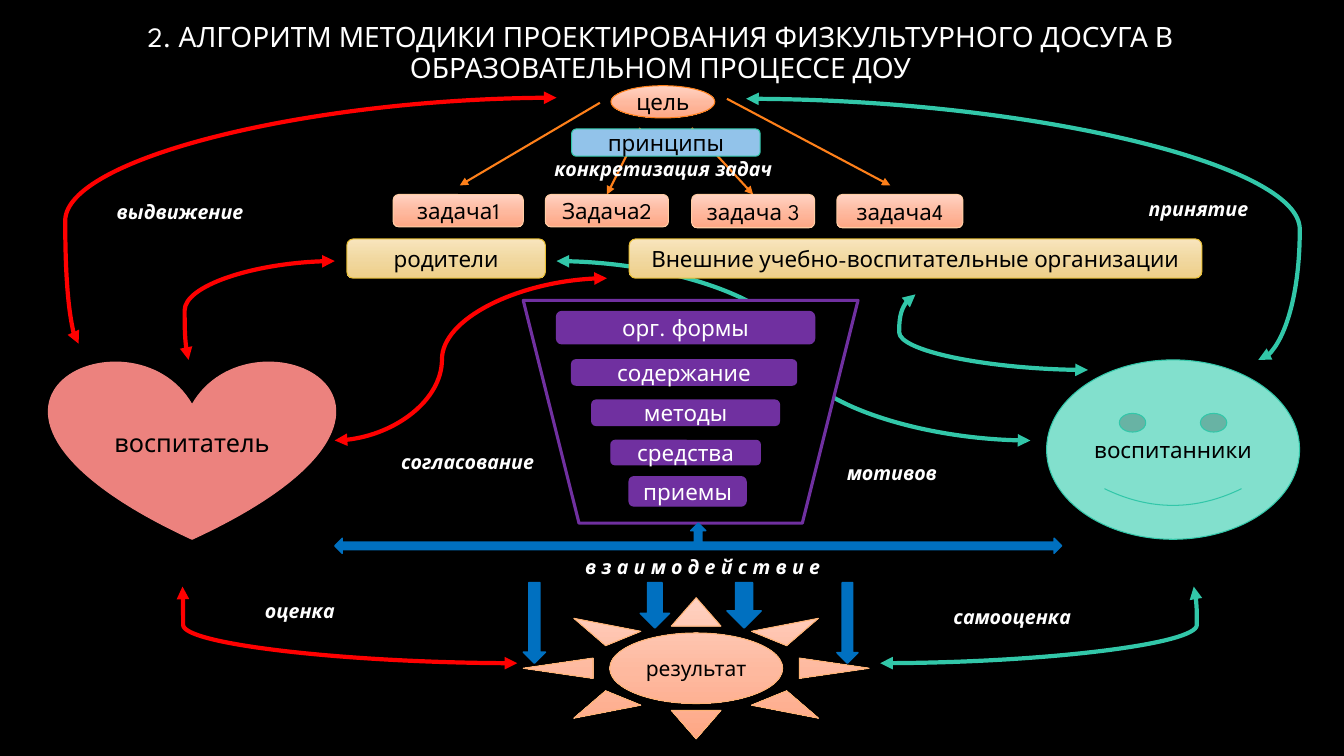
from copy import deepcopy
from dataclasses import dataclass

from pptx import Presentation
from pptx.dml.color import RGBColor as RGB
from pptx.enum.shapes import MSO_CONNECTOR as LINK, MSO_SHAPE as SHAPE
from pptx.enum.text import MSO_ANCHOR as ANCHOR, MSO_AUTO_SIZE as FIT, PP_ALIGN as ALIGN
from pptx.oxml.ns import qn
from pptx.oxml.xmlchemy import OxmlElement
from pptx.util import Inches, Pt


@dataclass(frozen=True)
class Theme:
    font: str = "League Spartan"
    black: str = "000000"
    white: str = "FFFFFF"
    red: str = "FF0000"
    teal: str = "32C7A9"
    mint: str = "82E0CD"
    sky: str = "92C3EA"
    rose: str = "EC827E"
    orange: str = "FE801A"
    apricot: str = "FEB376"
    cream: str = "FFCCA3"
    gold: str = "E9BF35"
    purple: str = "7030A0"
    blue: str = "0070C0"
    peach: tuple = ("FFD2C2", "FEB99F", "FEA785")
    sand: tuple = ("F8E5BD", "F1D8A0", "EECF89")
    title: int = 20
    large: int = 18
    body: int = 16
    small: int = 15
    label: int = 14


T = Theme()
STOPS = (0, 0.52, 1)

TITLE = ("2. АЛГОРИТМ МЕТОДИКИ ПРОЕКТИРОВАНИЯ ФИЗКУЛЬТУРНОГО ДОСУГА "
         "В ОБРАЗОВАТЕЛЬНОМ ПРОЦЕССЕ ДОУ")

# text, shape, (left, top, width, height), fill, line, type size
FIGURES = [
    ("цель", SHAPE.OVAL, (6.06, 0.85, 1.03, 0.32), T.peach, T.orange, T.body),
    ("результат", SHAPE.SUN, (5.19, 5.93, 3.43, 1.4), T.peach, T.apricot, T.small),
    ("воспитанники", SHAPE.SMILEY_FACE, (10.38, 3.57, 2.51, 1.78), T.mint, T.teal, T.body),
    ("воспитатель", SHAPE.HEART, (0.49, 3.57, 2.83, 1.78), T.rose, T.rose, T.large),
    ("принципы", SHAPE.ROUNDED_RECTANGLE, (5.67, 1.28, 1.87, 0.27), T.sky, T.teal, T.body),
]
# text, left, width, height
TASKS = [
    ("задача1", 3.9, 1.29, 0.32),
    ("Задача2", 5.41, 1.22, 0.32),
    ("задача 3", 6.86, 1.22, 0.33),
    ("задача4", 8.3, 1.25, 0.33),
]
# text, left, width
PARTNERS = [
    ("родители", 3.44, 1.97),
    ("Внешние учебно-воспитательные организации", 6.24, 5.68),
]
FUNNEL = (5.19, 2.98, 3.32, 2.21)
LAYERS = [
    ("орг. формы", (5.52, 3.09, 2.56, 0.32)),
    ("содержание", (5.67, 3.57, 2.23, 0.25)),
    ("методы", (5.87, 3.97, 1.86, 0.25)),
    ("средства", (6.06, 4.37, 1.48, 0.24)),
    ("приемы", (6.24, 4.73, 1.16, 0.29)),
]
BRIDGE = (3.32, 5.19, 7.21, 0.3)
# left, width, height
DROPS = [(8.3, 0.21, 0.8), (5.19, 0.22, 0.8), (7.21, 0.34, 0.45), (6.35, 0.29, 0.45)]

# text, box, alignment, anchor, wrap
LABELS = [
    ("конкретизация задач", (5.4, 1.5, 2.36, 0.34), ALIGN.CENTER, ANCHOR.MIDDLE, False),
    ("согласование", (3.88, 4.41, 1.79, 0.34), ALIGN.LEFT, ANCHOR.TOP, True),
    ("мотивов", (8.3, 4.52, 1.21, 0.34), ALIGN.LEFT, ANCHOR.TOP, True),
    ("выдвижение", (1.06, 1.93, 1.46, 0.34), ALIGN.LEFT, ANCHOR.MIDDLE, False),
    ("принятие", (10.99, 1.9, 1.49, 0.34), ALIGN.RIGHT, ANCHOR.MIDDLE, True),
    ("оценка", (2.53, 5.89, 0.94, 0.34), ALIGN.LEFT, ANCHOR.MIDDLE, False),
    ("самооценка", (9.22, 5.95, 1.5, 0.34), ALIGN.RIGHT, ANCHOR.MIDDLE, True),
    ("в з а и м о д е й с т в и е", (5.67, 5.45, 2.6, 0.34), ALIGN.CENTER, ANCHOR.MIDDLE, True),
]

# x1, y1, x2, y2, colour, bend in thousandths of the width
BACK_CURVES = [
    (5.52, 2.59, 10.22, 4.37, T.teal, 500),
    (7.4, 0.98, 12.48, 3.57, T.teal, 1081),
]
CURVES = [
    (0.78, 3.41, 5.52, 0.97, T.red, -28),
    (1.81, 5.82, 5.13, 6.58, T.red, 2),
    (8.73, 6.58, 11.84, 5.82, T.teal, 1010),
    (1.87, 3.57, 3.32, 2.59, T.red, -27),
    (9.08, 2.92, 10.79, 3.67, T.teal, -95),
    (3.32, 4.37, 6.02, 2.76, T.red, 394),
]
BACK_ARROWS = [(6.86, 1.27, 7.47, 1.93), (6.35, 1.27, 6.02, 1.93)]
ARROWS = [(5.95, 1.02, 4.56, 1.84), (7.21, 0.98, 8.83, 1.84)]


def write(shape, text, size, color, align=ALIGN.CENTER, anchor=ANCHOR.MIDDLE, wrap=True):
    frame = shape.text_frame
    frame.word_wrap = wrap
    frame.vertical_anchor = anchor
    para = frame.paragraphs[0]
    para.text = text
    para.alignment = align
    para.font.name = T.font
    para.font.size = Pt(size)
    para.font.color.rgb = RGB.from_string(color)
    return para


def paint(shape, fill):
    """Fill with one colour, or with a top-down gradient given a tuple."""
    if isinstance(fill, str):
        shape.fill.solid()
        shape.fill.fore_color.rgb = RGB.from_string(fill)
        return
    shape.fill.gradient()
    shape.fill.gradient_angle = 270
    stops = shape._element.spPr.find(".//" + qn("a:gsLst"))
    stops.append(deepcopy(stops[0]))
    for stop, pos, color in zip(shape.fill.gradient_stops, STOPS, fill):
        stop.position = pos
        stop.color.rgb = RGB.from_string(color)


def draw(slide, kind, box, fill, line, width=0.75):
    shape = slide.shapes.add_shape(kind, *map(Inches, box))
    shape.shadow.inherit = False
    paint(shape, fill)
    shape.line.color.rgb = RGB.from_string(line)
    shape.line.width = Pt(width)
    return shape


def join(slide, ends, color, width, bend=None):
    """Straight one-way arrow, or a curved two-way one when bend is given."""
    curved = bend is not None
    kind = LINK.CURVE if curved else LINK.STRAIGHT
    link = slide.shapes.add_connector(kind, *map(Inches, ends))
    link.line.color.rgb = RGB.from_string(color)
    link.line.width = Pt(width)
    props = link._element.spPr
    for tag in ("a:headEnd", "a:tailEnd") if curved else ("a:tailEnd",):
        tip = OxmlElement(tag)
        tip.set("type", "triangle")
        props.find(qn("a:ln")).append(tip)
    props.append(OxmlElement("a:effectLst"))
    if curved:
        guide = OxmlElement("a:gd")
        guide.set("name", "adj1")
        guide.set("fmla", f"val {bend * 100}")
        props.find(".//" + qn("a:avLst")).append(guide)


def link_all(slide, curves, arrows):
    for *ends, color, bend in curves:
        join(slide, ends, color, 3, bend)
    for ends in arrows:
        join(slide, ends, T.orange, 1.5)


def main():
    deck = Presentation()
    deck.slide_width, deck.slide_height = Inches(13.33), Inches(7.5)
    slide = deck.slides.add_slide(deck.slide_layouts[6])
    paint(slide.background, T.black)

    link_all(slide, BACK_CURVES, BACK_ARROWS)
    head = slide.shapes.add_textbox(*map(Inches, (0.21, 0.22, 12.68, 0.63)))
    write(head, TITLE, T.title, T.white).line_spacing = 0.9

    for text, kind, box, fill, line, size in FIGURES:
        write(draw(slide, kind, box, fill, line), text, size, T.black)
    bars = [(text, (x, 1.93, w, h), T.peach, T.cream, 0.75, T.black) for text, x, w, h in TASKS]
    bars += [(text, (x, 2.37, w, 0.39), T.sand, T.gold, 0.75, T.black) for text, x, w in PARTNERS]
    draw(slide, SHAPE.TRAPEZOID, FUNNEL, T.black, T.purple, 2.25).rotation = 180
    bars += [(text, box, T.purple, T.purple, 1, T.white) for text, box in LAYERS]
    for text, box, fill, line, width, ink in bars:
        bar = draw(slide, SHAPE.ROUNDED_RECTANGLE, box, fill, line, width)
        write(bar, text, T.body, ink)

    draw(slide, SHAPE.LEFT_RIGHT_UP_ARROW, BRIDGE, T.blue, T.blue, 1)
    link_all(slide, CURVES, ARROWS)
    for x, w, h in DROPS:
        draw(slide, SHAPE.DOWN_ARROW, (x, 5.78, w, h), T.blue, T.blue, 1)

    for text, box, align, anchor, wrap in LABELS:
        label = slide.shapes.add_textbox(*map(Inches, box))
        para = write(label, text, T.label, T.white, align, anchor, wrap)
        para.font.bold = para.font.italic = True
        label.text_frame.auto_size = FIT.SHAPE_TO_FIT_TEXT

    deck.save("out.pptx")


if __name__ == "__main__":
    main()
